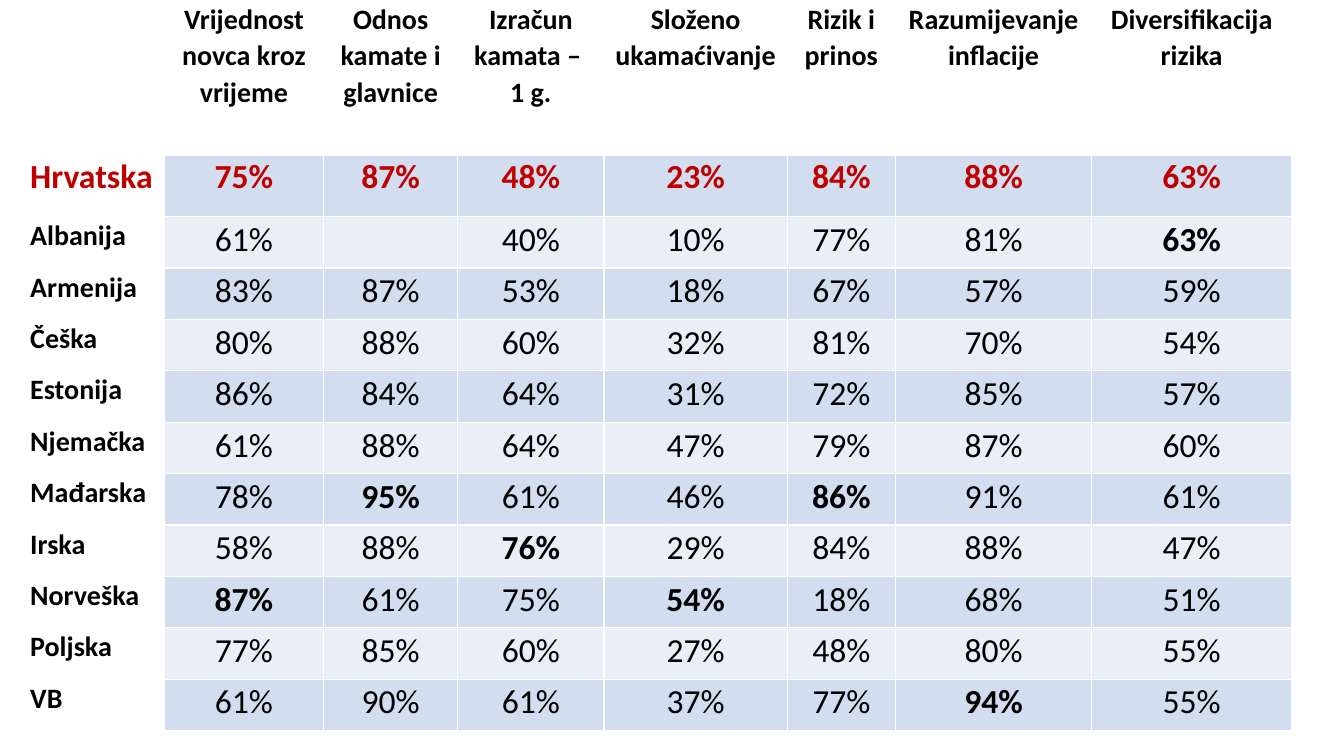
"""Build a slide with a table of financial literacy results by country."""
import pptx
import pptx.dml.color
import pptx.enum.text
import pptx.oxml
import pptx.oxml.ns
import pptx.util
from dataclasses import dataclass

HEADERS = ["", "Vrijednost novca kroz vrijeme", "Odnos kamate i glavnice",
           "Izračun kamata – \v1 g.", "Složeno ukamaćivanje", "Rizik i prinos",
           "Razumijevanje inflacije", "Diversifikacija rizika"]
RESULTS = [
    ("Hrvatska", 75, 87, 48, 23, 84, 88, 63),
    ("Albanija", 61, None, 40, 10, 77, 81, 63),
    ("Armenija", 83, 87, 53, 18, 67, 57, 59),
    ("Češka", 80, 88, 60, 32, 81, 70, 54),
    ("Estonija", 86, 84, 64, 31, 72, 85, 57),
    ("Njemačka", 61, 88, 64, 47, 79, 87, 60),
    ("Mađarska", 78, 95, 61, 46, 86, 91, 61),
    ("Irska", 58, 88, 76, 29, 84, 88, 47),
    ("Norveška", 87, 61, 75, 54, 18, 68, 51),
    ("Poljska", 77, 85, 60, 27, 48, 80, 55),
    ("VB", 61, 90, 61, 37, 77, 94, 55),
]
COLUMNS = [1.4, 1.58, 1.33, 1.45, 1.82, 1.07, 1.95, 1.98]
ROWS = [1.53, 0.62] + [0.51] * (len(RESULTS) - 1)
LEFT, TOP = 0.23, 0


@dataclass(frozen=True)
class Theme:
    font: str = "Calibri"
    label: int = 20
    value: int = 24
    text: str = "000000"
    accent: str = "C00000"
    paper: str = "FFFFFF"
    bands: tuple = ("D2DEEF", "EAEFF7")
    line: int = 1
    header_line: int = 3
    spacing: float = 1.07
    margin: float = 0.07


THEME = Theme()
rgb = pptx.dml.color.RGBColor.from_string
inches = pptx.util.Inches


def set_borders(cell, bottom, top):
    widths = {"lnL": THEME.line, "lnR": THEME.line, "lnT": top, "lnB": bottom}
    for i, (tag, width) in enumerate(widths.items()):
        cell._tc.get_or_add_tcPr().insert(i, pptx.oxml.parse_xml(
            f'<a:{tag} {pptx.oxml.ns.nsdecls("a")} w="{pptx.util.Pt(width)}">'
            f'<a:solidFill><a:srgbClr val="{THEME.paper}"/></a:solidFill></a:{tag}>'))


def fill_cell(cell, text, fill, size, color, bold, centred):
    cell.fill.solid()
    cell.fill.fore_color.rgb = rgb(fill)
    cell.margin_left = cell.margin_right = inches(THEME.margin)
    cell.margin_top = cell.margin_bottom = 0
    p = cell.text_frame.paragraphs[0]
    p.text = text
    p.line_spacing = THEME.spacing
    align = pptx.enum.text.PP_ALIGN
    p.alignment = align.CENTER if centred else align.LEFT
    p.font.name = THEME.font
    p.font.size = pptx.util.Pt(size)
    p.font.bold = bold
    p.font.color.rgb = rgb(color)


def main():
    prs = pptx.Presentation()
    prs.slide_width, prs.slide_height = inches(13.33), inches(7.5)
    s = prs.slides.add_slide(prs.slide_layouts[6])
    table = s.shapes.add_table(len(ROWS), len(COLUMNS), inches(LEFT), inches(TOP),
                               inches(sum(COLUMNS)), inches(sum(ROWS))).table
    table.first_row = table.horz_banding = False
    for column, width in zip(table.columns, COLUMNS):
        column.width = inches(width)
    for row, height in zip(table.rows, ROWS):
        row.height = inches(height)

    best = [max(v for v in values if v is not None)
            for values in list(zip(*RESULTS[1:]))[1:]]
    for c, header in enumerate(HEADERS):
        fill_cell(table.cell(0, c), header, THEME.paper, THEME.label, THEME.text, True, True)
    for r, (country, *values) in enumerate(RESULTS, 1):
        home = r == 1
        color = THEME.accent if home else THEME.text
        fill_cell(table.cell(r, 0), country, THEME.paper,
                  THEME.value if home else THEME.label, color, True, False)
        for c, value in enumerate(values, 1):
            text = "" if value is None else f"{value}%"
            fill_cell(table.cell(r, c), text, THEME.bands[(r - 1) % 2], THEME.value,
                      color, home or value == best[c - 1], True)
    for r, row in enumerate(table.rows):
        for cell in row.cells:
            set_borders(cell, THEME.header_line if r == 0 else THEME.line,
                        THEME.header_line if r == 1 else THEME.line)
    prs.save("out.pptx")


if __name__ == "__main__":
    main()
